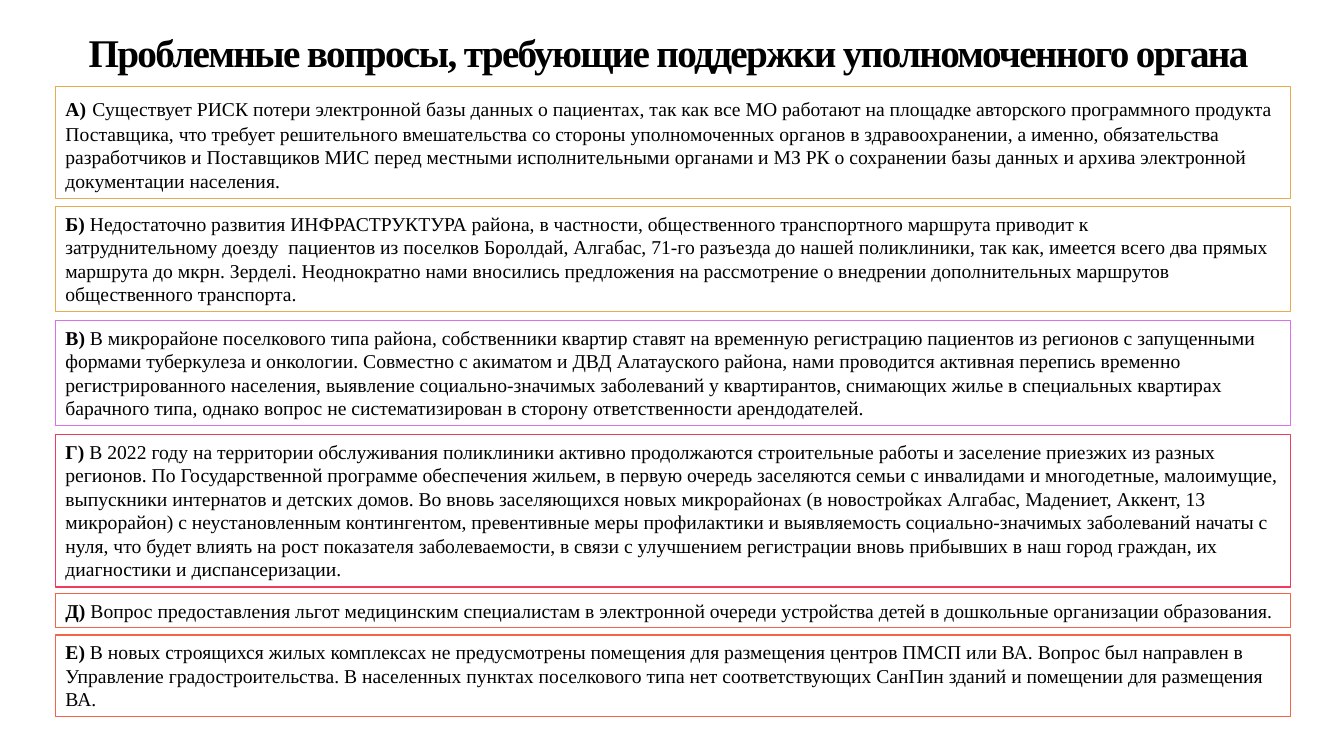
from pptx import Presentation
from pptx.dml.color import RGBColor
from pptx.enum.shapes import MSO_SHAPE
from pptx.enum.text import MSO_ANCHOR, MSO_AUTO_SIZE, PP_ALIGN
from pptx.util import Cm, Pt

RECT = MSO_SHAPE.RECTANGLE
TOP, MIDDLE = MSO_ANCHOR.TOP, MSO_ANCHOR.MIDDLE
GROW = MSO_AUTO_SIZE.SHAPE_TO_FIT_TEXT
LEFT, CENTER = PP_ALIGN.LEFT, PP_ALIGN.CENTER
ORANGE, VIOLET, RED, CORAL = "E8AB4E", "DC6FEC", "F03B5E", "F56447"


def color(code):
    return RGBColor.from_string(code)


def style(para, size, align):
    para.alignment = align
    para.font.name = "Times New Roman"
    para.font.size = Pt(size)
    para.font.color.rgb = color("000000")


# Top, height, border, letter, size of the space after it, paragraphs
ISSUES = [
    (2.18, 2.82, ORANGE, "А)", 18, [
        "Существует РИСК потери электронной базы данных о пациентах, так как все МО работают "
        "на площадке авторского программного продукта Поставщика, что требует решительного "
        "вмешательства со стороны уполномоченных органов в здравоохранении, а именно, "
        "обязательства разработчиков и Поставщиков МИС перед местными исполнительными органами "
        "и МЗ РК о сохранении базы данных и архива электронной документации населения."]),
    (5.21, 2.64, ORANGE, "Б)", 14, [
        "Недостаточно развития ИНФРАСТРУКТУРА района, в частности, общественного "
        "транспортного маршрута приводит к",
        "затруднительному доезду  пациентов из поселков Боролдай, Алгабас, 71-го разъезда до "
        "нашей поликлиники, так как, имеется всего два прямых маршрута до мкрн. Зерделі. "
        "Неоднократно нами вносились предложения на рассмотрение о внедрении дополнительных "
        "маршрутов общественного транспорта."]),
    (8.08, 2.64, VIOLET, "В)", 14, [
        "В микрорайоне поселкового типа района, собственники квартир ставят на временную "
        "регистрацию пациентов из регионов с запущенными формами туберкулеза и онкологии. "
        "Совместно с акиматом и ДВД Алатауского района, нами проводится активная перепись "
        "временно регистрированного населения, выявление социально-значимых заболеваний у "
        "квартирантов, снимающих жилье в специальных квартирах барачного типа, однако вопрос "
        "не систематизирован в сторону ответственности арендодателей."]),
    (10.95, 3.84, RED, "Г)", 14, [
        "В 2022 году на территории обслуживания поликлиники активно продолжаются строительные "
        "работы и заселение приезжих из разных регионов. По Государственной программе "
        "обеспечения жильем, в первую очередь заселяются семьи с инвалидами и многодетные, "
        "малоимущие, выпускники интернатов и детских домов. Во вновь заселяющихся новых "
        "микрорайонах (в новостройках Алгабас, Мадениет, Аккент, 13 микрорайон) с "
        "неустановленным контингентом, превентивные меры профилактики и выявляемость "
        "социально-значимых заболеваний начаты с нуля, что будет влиять на рост показателя "
        "заболеваемости, в связи с улучшением регистрации вновь прибывших в наш город граждан, "
        "их диагностики и диспансеризации."]),
    (14.96, 0.86, CORAL, "Д)", 14, [
        "Вопрос предоставления льгот медицинским специалистам в электронной очереди устройства "
        "детей в дошкольные организации образования."]),
    (16, 2.06, CORAL, "Е)", 14, [
        "В новых строящихся жилых комплексах не предусмотрены помещения для размещения центров "
        "ПМСП или ВА. Вопрос был направлен в Управление градостроительства. В населенных "
        "пунктах поселкового типа нет соответствующих СанПин зданий и помещении для "
        "размещения ВА."]),
]

deck = Presentation()
deck.slide_width, deck.slide_height = Cm(33.87), Cm(19.05)
slide = deck.slides.add_slide(deck.slide_layouts[6])

title = slide.shapes.add_textbox(Cm(1.88), Cm(0.94), Cm(29.92), Cm(0.91))
title.text_frame.word_wrap = True
title.text_frame.vertical_anchor = MIDDLE
head = title.text_frame.paragraphs[0]
head.line_spacing = 0.85
style(head, 28, CENTER)
head.font.bold = True
run = head.add_run()
run.text = "Проблемные вопросы, требующие поддержки уполномоченного органа"
run._r.get_or_add_rPr().set("spc", "-120")

for top, height, border, letter, space, texts in ISSUES:
    box = slide.shapes.add_shape(RECT, Cm(1.4), Cm(top), Cm(31.12), Cm(height))
    box.shadow.inherit = False
    box.fill.solid()
    box.fill.fore_color.rgb = color("FFFFFF")
    box.line.color.rgb = color(border)
    box.line.width = Pt(1)
    frame = box.text_frame
    frame.word_wrap = True
    frame.auto_size = GROW
    frame.vertical_anchor = TOP
    for i, text in enumerate(texts):
        para = frame.paragraphs[0] if i == 0 else frame.add_paragraph()
        style(para, 14, LEFT)
        if i == 0:
            mark = para.add_run()
            mark.text = letter
            mark.font.bold = True
            gap = para.add_run()
            gap.text = " "
            gap.font.size = Pt(space)
        para.add_run().text = text

deck.save("out.pptx")
